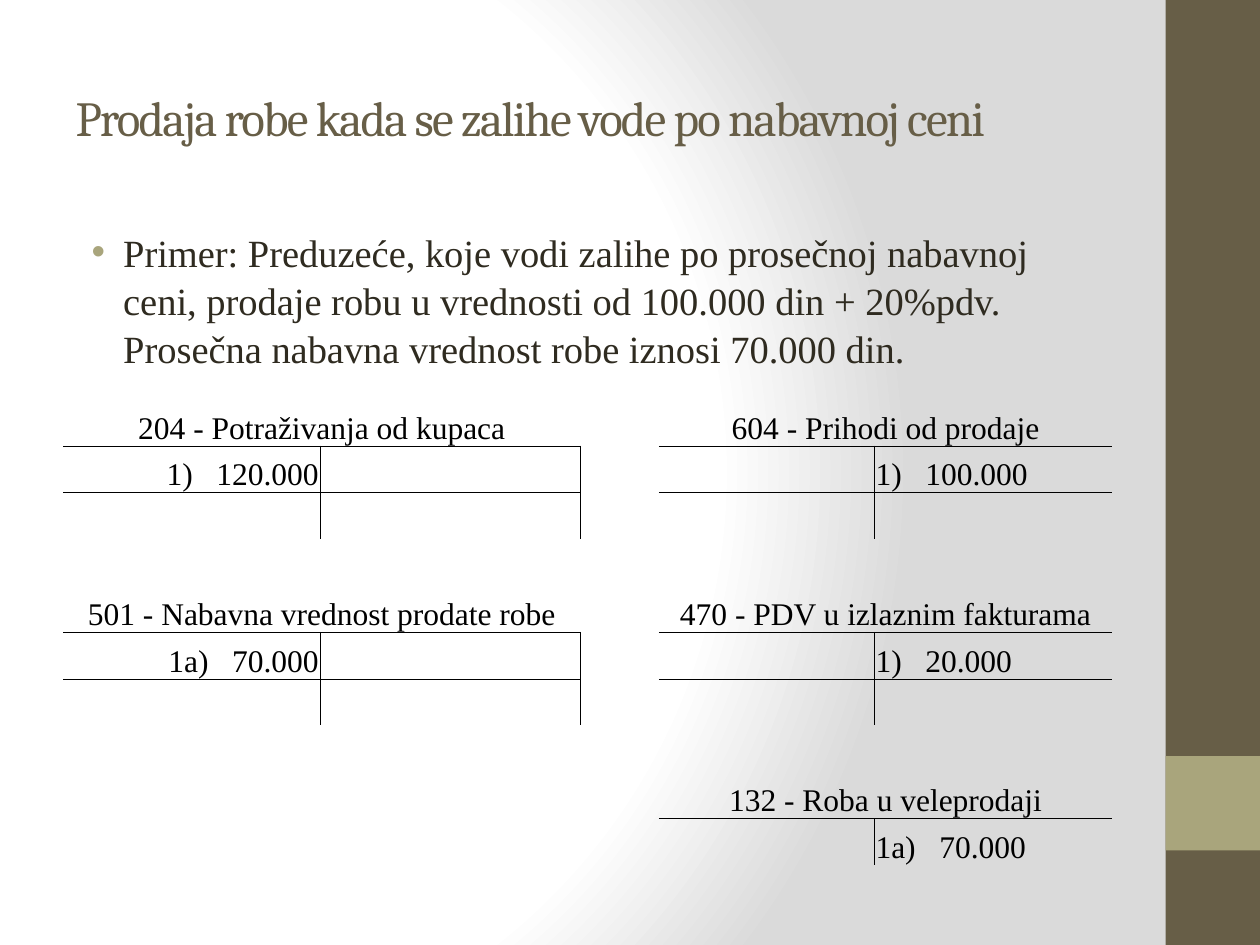
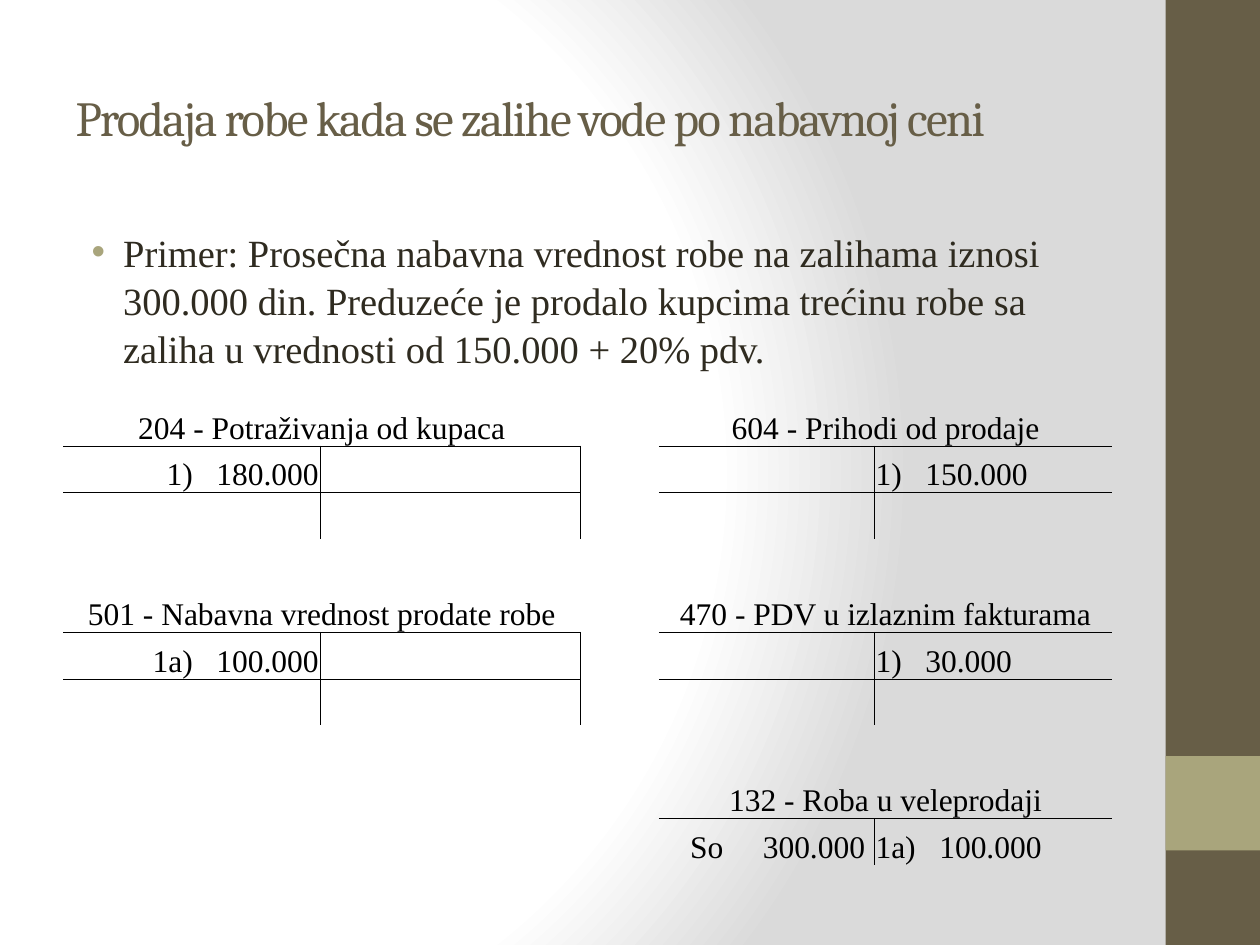
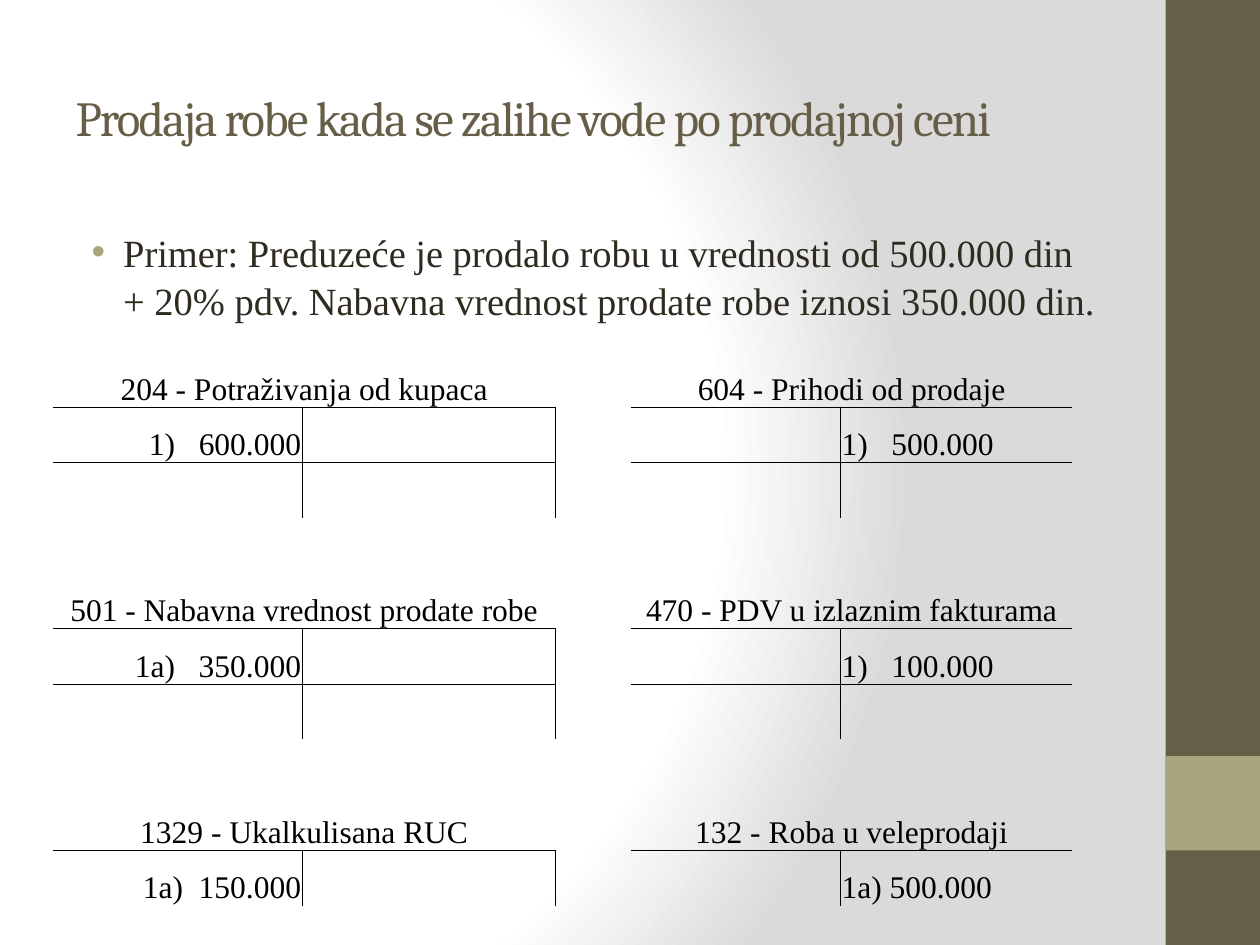
from collections import defaultdict

from lxml.etree import SubElement
from pptx import Presentation
from pptx.dml.color import RGBColor
from pptx.enum.shapes import MSO_SHAPE
from pptx.enum.text import MSO_ANCHOR, MSO_AUTO_SIZE, PP_ALIGN
from pptx.oxml import parse_xml
from pptx.oxml.ns import nsdecls, qn
from pptx.util import Inches, Pt

BROWN = RGBColor(0x67, 0x5E, 0x47)
OLIVE = RGBColor(0xA9, 0xA5, 0x7C)
INK = RGBColor(0x2F, 0x2B, 0x20)
BLACK = RGBColor(0x00, 0x00, 0x00)
WHITE = RGBColor(0xFF, 0xFF, 0xFF)
GRAY = RGBColor(0xDA, 0xDA, 0xDA)

TITLE_FONT = "Cambria"
BODY_FONT = "Times New Roman"
PLAIN_TABLE_STYLE = "{2D5ABB26-0587-4C30-8999-92F81FD0307C}"
ROW_COUNT = 10
ACCOUNT_STEP = 4
DEBIT_COLUMNS = (0, 3)

COST_TITLE = "Prodaja robe kada se zalihe vode po nabavnoj ceni"
SALE_TITLE = "Prodaja robe kada se zalihe vode po prodajnoj ceni"
RECEIVABLES = "204 - Potraživanja od kupaca"
REVENUE = "604 - Prihodi od prodaje"
COST_OF_GOODS = "501 - Nabavna vrednost prodate robe"
OUTPUT_VAT = "470 - PDV u izlaznim fakturama"
MARGIN = "1329 - Ukalkulisana RUC"
GOODS = "132 - Roba u veleprodaji"

COST_LAYOUT = dict(left=0.5, top=3.13, widths=(2.04, 2.07, 0.62, 1.71, 1.89),
                   head_height=0.41, row_height=0.37)
SALE_LAYOUT = dict(left=0.42, top=2.75, widths=(1.98, 2.01, 0.6, 1.66, 1.84),
                   head_height=0.48, row_height=0.44)

EXAMPLES = [
    (COST_TITLE,
     "Primer: Preduzeće, koje vodi zalihe po prosečnoj nabavnoj ceni, prodaje robu "
     "u vrednosti od 100.000 din + 20%pdv. Prosečna nabavna vrednost robe iznosi "
     "70.000 din.",
     [[(RECEIVABLES, "1)   120.000", ""), (REVENUE, "", "1)   100.000")],
      [(COST_OF_GOODS, "1a)   70.000", ""), (OUTPUT_VAT, "", "1)   20.000")],
      [None, (GOODS, "", "1a)   70.000")]],
     COST_LAYOUT),
    (COST_TITLE,
     "Primer: Prosečna nabavna vrednost robe na zalihama iznosi 300.000 din. "
     "Preduzeće je prodalo kupcima trećinu robe sa zaliha u vrednosti od "
     "150.000 + 20% pdv.",
     [[(RECEIVABLES, "1)   180.000", ""), (REVENUE, "", "1)   150.000")],
      [(COST_OF_GOODS, "1a)   100.000", ""), (OUTPUT_VAT, "", "1)   30.000")],
      [None, (GOODS, "So     300.000 ", "1a)   100.000")]],
     COST_LAYOUT),
    (SALE_TITLE,
     "Primer: Preduzeće je prodalo robu u vrednosti od 500.000 din + 20% pdv. "
     "Nabavna vrednost prodate robe iznosi 350.000 din.",
     [[(RECEIVABLES, "1)   600.000", ""), (REVENUE, "", "1)   500.000")],
      [(COST_OF_GOODS, "1a)   350.000", ""), (OUTPUT_VAT, "", "1)   100.000")],
      [(MARGIN, "1a)  150.000", ""), (GOODS, "", "1a) 500.000")]],
     SALE_LAYOUT),
]


def write(frame, text, font=BODY_FONT, size=18, color=BLACK, align=PP_ALIGN.LEFT,
          tracking=None):
    paragraph = frame.paragraphs[0]
    paragraph.alignment = align
    run = paragraph.add_run()
    run.text = text
    run.font.name = font
    run.font.size = Pt(size)
    run.font.color.rgb = color
    if tracking is not None:
        run.font._element.set("spc", str(tracking * 100))
    return paragraph


class AccountingDeck:
    def __init__(self):
        self.presentation = Presentation()
        self.presentation.slide_width = Inches(10)
        self.presentation.slide_height = Inches(7.5)
        self.master = self.presentation.slide_master
        self.slide = None
        self.background()

    def background(self):
        self.master.background.fill.solid()
        properties = self.master.element.cSld.bg.bgPr
        stops = "".join(
            f'<a:gs pos="{position * 1000}"><a:srgbClr val="{color}"/></a:gs>'
            for position, color in ((0, WHITE), (75, WHITE), (100, GRAY)))
        gradient = parse_xml(
            f'<a:gradFill {nsdecls("a")} rotWithShape="1"><a:gsLst>{stops}</a:gsLst>'
            '<a:path path="circle">'
            '<a:fillToRect l="20000" t="50000" r="100000" b="50000"/>'
            '</a:path></a:gradFill>')
        properties.replace(properties[0], gradient)

    def new_slide(self):
        first = self.slide is None
        self.slide = self.presentation.slides.add_slide(
            self.presentation.slide_layouts[5])
        if first:
            self.master_band(0, 7.5, BROWN)
            self.master_band(6, 0.75, OLIVE)

    def master_band(self, top, height, color):
        shape = self.slide.shapes.add_shape(
            MSO_SHAPE.RECTANGLE, Inches(9.25), Inches(top), Inches(0.75), Inches(height))
        shape.shadow.inherit = False
        shape.fill.solid()
        shape.fill.fore_color.rgb = color
        shape.line.fill.background()
        tree = self.master.shapes.element
        shape.element.nvSpPr.cNvPr.set("id", str(100 + len(tree)))
        tree.append(shape.element)

    def title(self, text):
        shape = self.slide.shapes.title
        shape.left, shape.top = Inches(0.5), Inches(0.3)
        shape.width, shape.height = Inches(8.33), Inches(1.25)
        frame = shape.text_frame
        frame.auto_size = MSO_AUTO_SIZE.NONE
        frame.vertical_anchor = MSO_ANCHOR.MIDDLE
        write(frame, text, font=TITLE_FONT, size=28, color=BROWN, tracking=-1)

    def bullet(self, text):
        shape = self.slide.shapes.add_textbox(
            Inches(0.5), Inches(1.75), Inches(8.33), Inches(5.25))
        frame = shape.text_frame
        frame.word_wrap = True
        paragraph = write(frame, text, size=22, color=INK)
        paragraph.space_before = Pt(4.4)
        paragraph.line_spacing = 1.04
        properties = paragraph._p.get_or_add_pPr()
        properties.set("marL", str(Inches(0.38)))
        properties.set("indent", str(Inches(-0.25)))
        bullet_color = SubElement(properties, qn("a:buClr"))
        SubElement(bullet_color, qn("a:srgbClr"), val=str(OLIVE))
        SubElement(properties, qn("a:buFont"), typeface="Arial")
        SubElement(properties, qn("a:buChar"), char="•")

    def cell_style(self, cell, sides):
        cell.margin_left = cell.margin_right = cell.margin_top = Inches(0.01)
        cell.margin_bottom = 0
        cell.vertical_anchor = MSO_ANCHOR.BOTTOM
        properties = cell._tc.get_or_add_tcPr()
        for side in "LRTB":
            if side in sides:
                line = SubElement(properties, qn(f"a:ln{side}"), w=str(Pt(0.5)))
                fill = SubElement(line, qn("a:solidFill"))
                SubElement(fill, qn("a:srgbClr"), val=str(BLACK))
        cell.fill.background()

    def accounts(self, account_rows, left, top, widths, head_height, row_height):
        heights = [head_height] + [row_height] * (ROW_COUNT - 1)
        frame = self.slide.shapes.add_table(
            ROW_COUNT, len(widths), Inches(left), Inches(top),
            Inches(sum(widths)), Inches(sum(heights)))
        table = frame.table
        table.first_row = table.horz_banding = False
        table._tbl.tblPr.find(qn("a:tableStyleId")).text = PLAIN_TABLE_STYLE
        for column, width in zip(table.columns, widths):
            column.width = Inches(width)
        for row, height in zip(table.rows, heights):
            row.height = Inches(height)

        borders = defaultdict(str)
        for index, pair in enumerate(account_rows):
            for column, account in zip(DEBIT_COLUMNS, pair):
                if account:
                    self.account(table, borders, index * ACCOUNT_STEP, column, *account)
        for row in range(ROW_COUNT):
            for column in range(len(widths)):
                self.cell_style(table.cell(row, column), borders[row, column])

    def account(self, table, borders, row, column, name, debit, credit):
        head = table.cell(row, column)
        head.merge(table.cell(row, column + 1))
        write(head.text_frame, name, align=PP_ALIGN.CENTER)
        for offset, entry, align, side in ((0, debit, PP_ALIGN.RIGHT, "R"),
                                           (1, credit, PP_ALIGN.LEFT, "L")):
            if entry:
                cell = table.cell(row + 1, column + offset)
                write(cell.text_frame, entry, align=align)
            borders[row, column + offset] += "B"
            borders[row + 1, column + offset] += "T"
            for body_row in range(row + 1, min(row + 3, ROW_COUNT)):
                borders[body_row, column + offset] += side


def main():
    deck = AccountingDeck()
    for title, example, account_rows, layout in EXAMPLES:
        deck.new_slide()
        deck.title(title)
        deck.bullet(example)
        deck.accounts(account_rows, **layout)
    deck.presentation.save("out.pptx")


if __name__ == "__main__":
    main()
